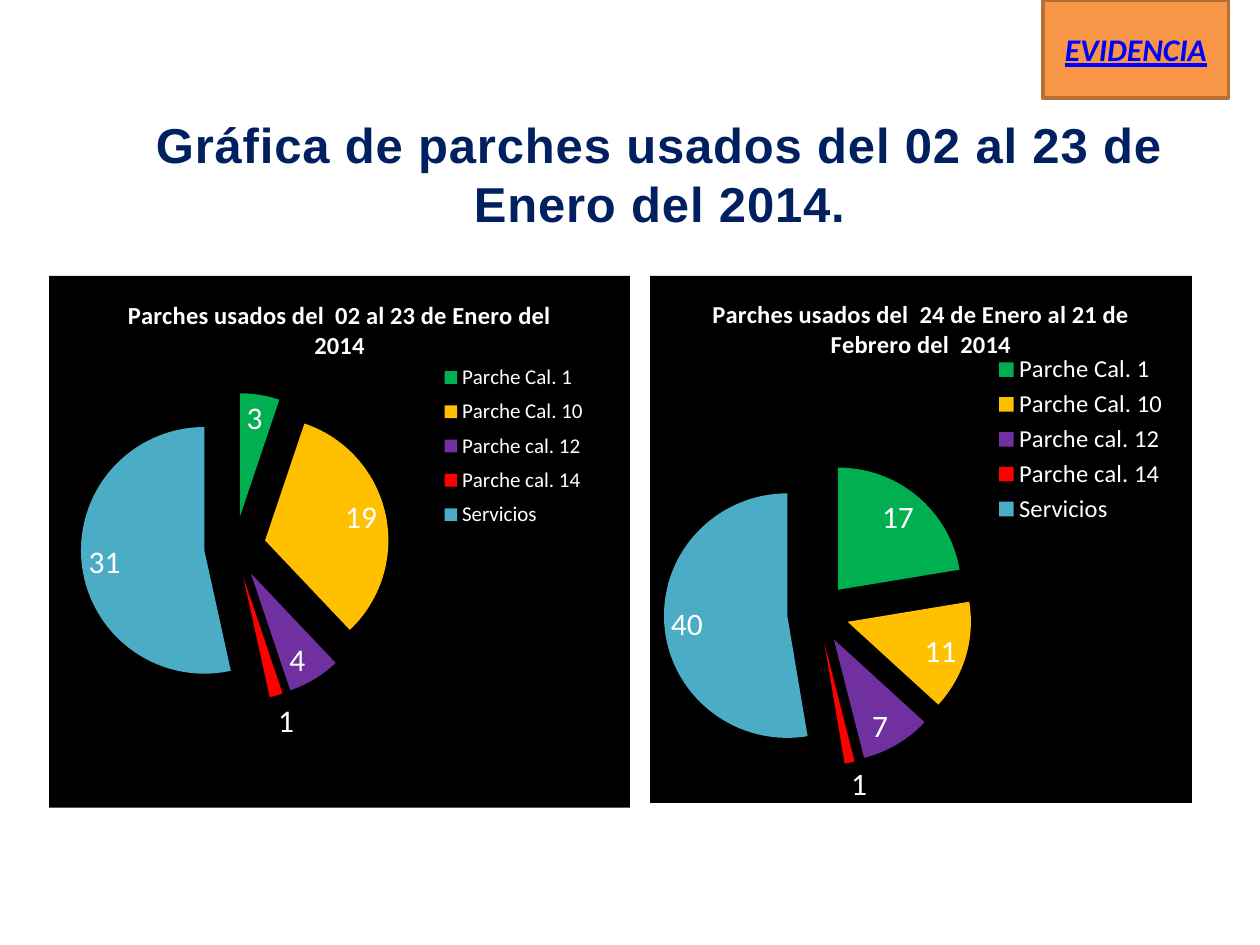
from lxml.etree import SubElement
from pptx import Presentation
from pptx.chart.data import CategoryChartData
from pptx.dml.color import RGBColor
from pptx.enum.chart import XL_CHART_TYPE as ChartType
from pptx.enum.chart import XL_LABEL_POSITION as LabelPosition
from pptx.enum.chart import XL_LEGEND_POSITION as LegendPosition
from pptx.enum.shapes import MSO_SHAPE as Preset
from pptx.enum.text import MSO_ANCHOR as Anchor
from pptx.enum.text import PP_ALIGN as Align
from pptx.oxml import parse_xml
from pptx.oxml.ns import nsdecls, qn
from pptx.util import Inches, Pt

COLORS = {
    "navy": "002060", "link": "0000FF", "orange": "F79646", "brown": "B76F34",
    "black": "000000", "white": "FFFFFF",
}
HEADING = "Gráfica de parches usados del 02 al 23 de Enero del 2014."
BUTTON = "EVIDENCIA"
SLICES = {
    "Parche Cal. 1": "00B050",
    "Parche Cal. 10": "FFC000",
    "Parche cal. 12": "7030A0",
    "Parche cal. 14": "FF0000",
    "Servicios": "4BACC6",
}
CHART_TOP, CHART_HEIGHT = 2.19, 4.22
# plot and legend are x, y, width, height as shares of the chart
PIES = [
    {"title": "Parches usados del  02 al 23 de Enero del 2014",
     "values": (3, 19, 4, 1, 31), "left": 0.39, "width": 4.61,
     "plot": (0.03, 0.22, 0.58, 0.58),
     "legend": (0.66, 0.15, 0.28, 0.34), "legend_size": 12},
    {"title": "Parches usados del  24 de Enero al 21 de Febrero del  2014",
     "values": (17, 11, 7, 1, 40), "left": 5.16, "width": 4.3,
     "plot": (0.02, 0.35, 0.58, 0.58),
     "legend": (0.63, 0.14, 0.33, 0.34), "legend_size": 14},
]


def rgb(name):
    return RGBColor.from_string(COLORS.get(name, name))


def set_font(font, size, color, face="Calibri", bold=False, italic=False,
             underline=False):
    font.size, font.name = Pt(size), face
    font.bold, font.italic, font.underline = bold, italic, underline
    font.color.rgb = rgb(color)


def write(frame, text, **style):
    frame.word_wrap = True
    para = frame.paragraphs[0]
    para.alignment = Align.CENTER
    span = para.add_run()
    span.text = text
    set_font(span.font, **style)
    return span


def manual_layout(shares, inner=False):
    layout = parse_xml(f"<c:layout {nsdecls('c')}/>")
    manual = SubElement(layout, qn("c:manualLayout"))
    settings = [("layoutTarget", "inner")] if inner else []
    settings += [("xMode", "edge"), ("yMode", "edge")]
    settings += zip("xywh", shares)
    for tag, value in settings:
        SubElement(manual, qn(f"c:{tag}")).set("val", str(value))
    return layout


def style_chart_xml(chart, pie):
    """Set the black background, the exploded slices and the layouts."""
    space = chart.element
    background = parse_xml(
        f"<c:spPr {nsdecls('c', 'a')}><a:solidFill><a:srgbClr "
        f"val=\"{COLORS['black']}\"/></a:solidFill><a:ln><a:noFill/></a:ln></c:spPr>")
    space.find(qn("c:chart")).addnext(background)

    explosion = parse_xml(f'<c:explosion {nsdecls("c")} val="25"/>')
    next(space.iter(qn("c:ser"))).find(qn("c:tx")).addnext(explosion)

    area = next(space.iter(qn("c:plotArea")))
    legend = next(space.iter(qn("c:legend")))
    for parent in (area, legend):
        for old in parent.findall(qn("c:layout")):
            parent.remove(old)
    area.insert(0, manual_layout(pie["plot"], inner=True))
    legend.find(qn("c:legendPos")).addnext(manual_layout(pie["legend"]))


def add_pie(page, pie):
    data = CategoryChartData()
    data.categories = list(SLICES)
    data.add_series("Series 1", pie["values"])
    chart = page.shapes.add_chart(
        ChartType.PIE, Inches(pie["left"]), Inches(CHART_TOP),
        Inches(pie["width"]), Inches(CHART_HEIGHT), data).chart
    set_font(chart.font, 18, "white")

    chart.has_title = True
    write(chart.chart_title.text_frame, pie["title"], size=14, color="white", bold=True)
    chart.chart_title.include_in_layout = False

    chart.has_legend = True
    chart.legend.position = LegendPosition.TOP
    chart.legend.include_in_layout = False
    set_font(chart.legend.font, pie["legend_size"], "white")
    style_chart_xml(chart, pie)

    plot = chart.plots[0]
    plot.vary_by_categories = True
    for index, color in enumerate(SLICES.values()):
        fill = plot.series[0].points[index].format.fill
        fill.solid()
        fill.fore_color.rgb = rgb(color)
    labels = plot.series[0].data_labels
    labels.show_value = True
    labels.position = LabelPosition.BEST_FIT
    set_font(labels.font, 18, "white")


def add_heading(page):
    box = page.shapes.add_textbox(Inches(0.78), Inches(0.86), Inches(8.91), Inches(1.04))
    span = write(box.text_frame, HEADING, size=28, color="navy", face="Arial", bold=True)
    span.font._element.set("spc", "50")


def add_button(page):
    box = page.shapes.add_shape(
        Preset.RECTANGLE, Inches(8.28), 0, Inches(1.47), Inches(0.78))
    box.shadow.inherit = False
    box.fill.solid()
    box.fill.fore_color.rgb = rgb("orange")
    box.line.color.rgb = rgb("brown")
    box.line.width = Pt(2)
    box.text_frame.vertical_anchor = Anchor.MIDDLE
    write(box.text_frame, BUTTON, size=18, color="link", bold=True, italic=True,
          underline=True)


def main():
    deck = Presentation()
    deck.slide_width, deck.slide_height = Inches(10), Inches(7.5)
    page = deck.slides.add_slide(deck.slide_layouts[6])
    add_heading(page)
    for pie in PIES:
        add_pie(page, pie)
    add_button(page)
    deck.save("out.pptx")


if __name__ == "__main__":
    main()
